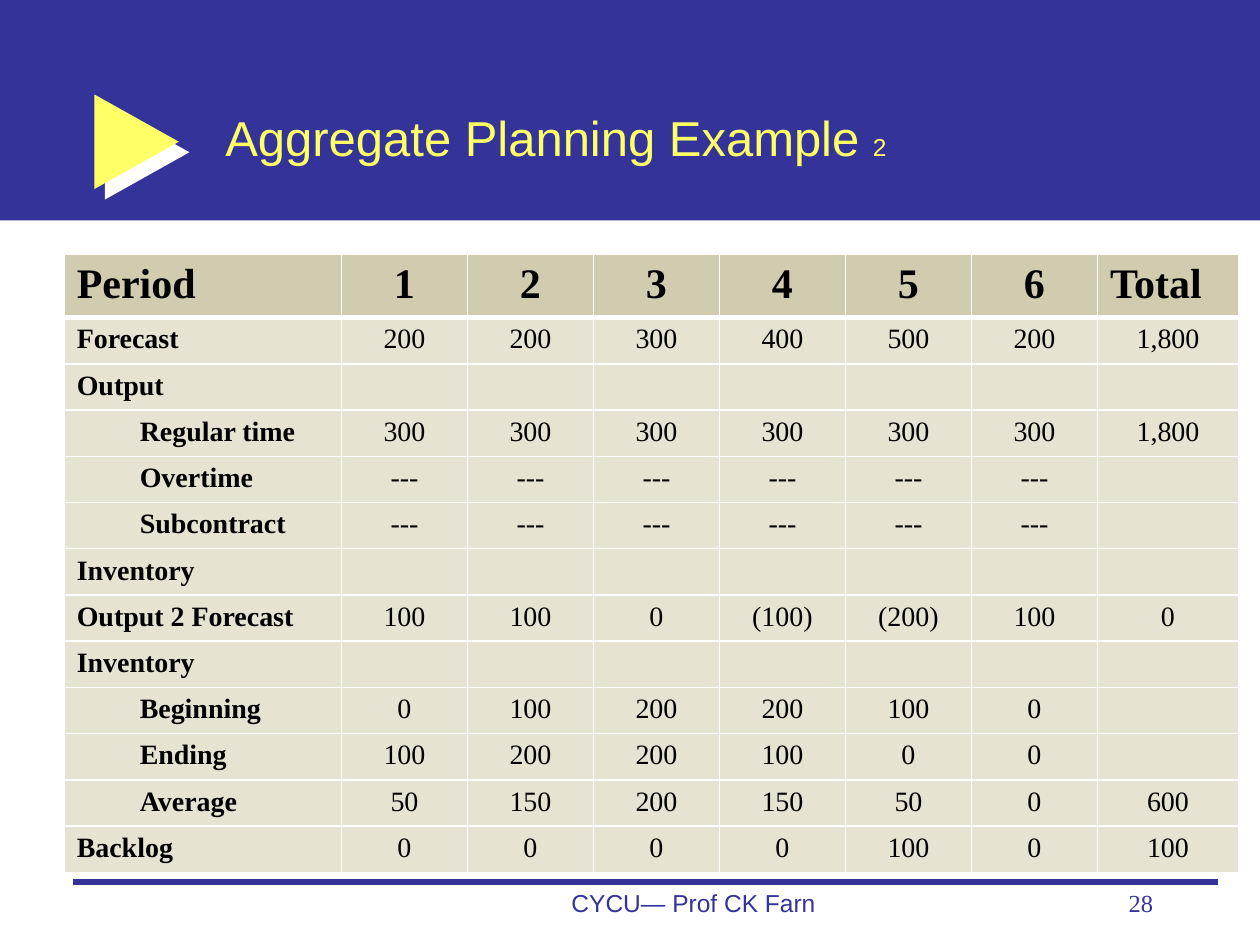
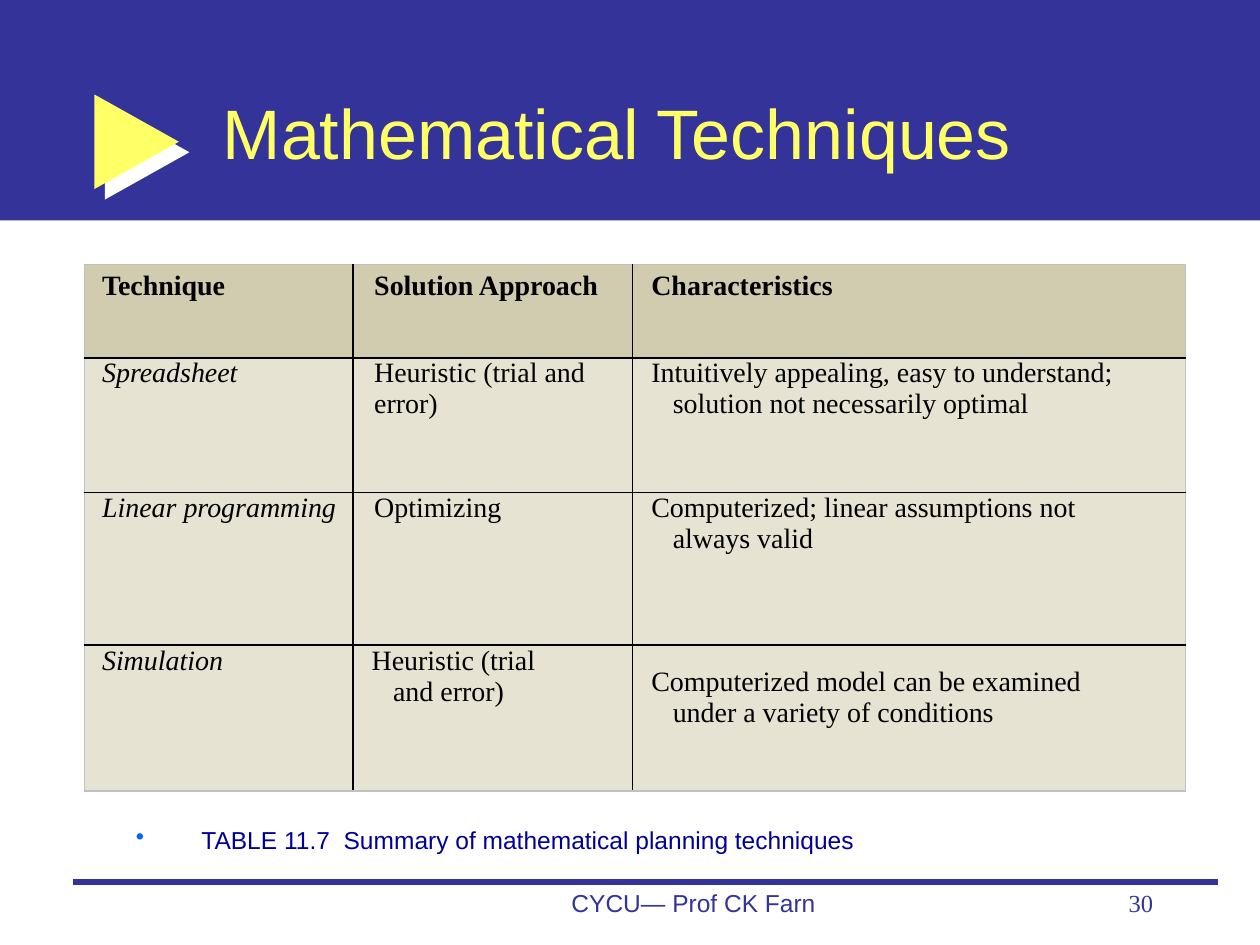
from dataclasses import dataclass
from typing import NamedTuple

from lxml.etree import SubElement
from pptx import Presentation
from pptx.dml.color import RGBColor as Rgb
from pptx.enum.shapes import MSO_CONNECTOR as Link, MSO_SHAPE as Shape
from pptx.enum.text import MSO_ANCHOR as Anchor, PP_ALIGN as Align
from pptx.oxml.ns import qn
from pptx.util import Inches, Pt


@dataclass(frozen=True)
class Theme:
    navy: str = "333399"
    yellow: str = "FFFF66"
    white: str = "FFFFFF"
    black: str = "000000"
    silver: str = "C0C0C0"
    head: str = "D1CBAF"
    body: str = "E6E3D2"
    note: str = "000099"
    dot: str = "0066FF"
    sans: str = "Arial"
    serif: str = "Times New Roman"
    big: int = 40
    title: int = 28
    period: int = 24
    cell: int = 16
    small: int = 14


class Box(NamedTuple):
    left: float
    top: float
    width: float
    height: float


class Style(NamedTuple):
    size: int
    color: str
    face: str
    bold: bool = False
    slant: bool = False


class Lines(NamedTuple):
    inner: str
    outer: str
    head: float


class Plan(NamedTuple):
    label: str
    values: str = ""
    sub: bool = False


class Entry(NamedTuple):
    text: str
    indent: float
    hang: float = 0
    top: float = 0


T = Theme()
FOOTER = "CYCU— Prof CK Farn"
PERIODS = ("Period", "1", "2", "3", "4", "5", "6", "Total")
PLANS = (
    Plan("Forecast", "200 200 300 400 500 200 1,800"),
    Plan("Output"),
    Plan("Regular time", "300 300 300 300 300 300 1,800", True),
    Plan("Overtime", "--- --- --- --- --- ---", True),
    Plan("Subcontract", "--- --- --- --- --- ---", True),
    Plan("Inventory"),
    Plan("Output 2 Forecast", "100 100 0 (100) (200) 100 0"),
    Plan("Inventory"),
    Plan("Beginning", "0 100 200 200 100 0", True),
    Plan("Ending", "100 200 200 100 0 0", True),
    Plan("Average", "50 150 200 150 50 0 600", True),
    Plan("Backlog", "0 0 0 0 100 0 100"),
)
METHODS = (
    (Entry("Technique", 0.14, top=0.05),
     Entry("Solution Approach", 0.17, top=0.05),
     Entry("Characteristics", 0.15, top=0.05)),
    (Entry("Spreadsheet", 0.14),
     Entry("Heuristic (trial and error)", 0.17),
     Entry("Intuitively appealing, easy to understand; "
           "solution not necessarily optimal", 0.32, -0.17)),
    (Entry("Linear programming", 0.14),
     Entry("Optimizing", 0.17),
     Entry("Computerized; linear assumptions not\valways valid", 0.32, -0.17)),
    (Entry("Simulation", 0.14),
     Entry("Heuristic (trial\vand error)", 0.32, -0.17),
     Entry("Computerized model can be examined\vunder a variety of conditions",
           0.32, -0.17, 0.17)),
)


def place(box: Box) -> list:
    return [Inches(side) for side in box]


def tint(parent, color: str) -> None:
    SubElement(parent, qn("a:srgbClr"), val=color)


def dress(font, style: Style) -> None:
    font.size = Pt(style.size)
    font.name = style.face
    font.bold = style.bold
    font.italic = style.slant
    font.color.rgb = Rgb.from_string(style.color)


def write(para, text: str, style: Style, align=Align.LEFT) -> None:
    para.text = text
    para.alignment = align
    for run in para.runs:
        dress(run.font, style)
    if not text:
        SubElement(para._p, qn("a:endParaRPr"), sz=str(style.size * 100))


def indent(para, left: float, first: float = 0) -> None:
    props = para._p.get_or_add_pPr()
    props.set("marL", str(Inches(left)))
    props.set("indent", str(Inches(first)))


def label(slide, box: Box, text: str, style: Style, align=Align.LEFT,
          anchor=Anchor.TOP):
    frame = slide.shapes.add_textbox(*place(box)).text_frame
    frame.word_wrap = True
    frame.vertical_anchor = anchor
    para = frame.paragraphs[0]
    write(para, text, style, align)
    return para


def heading(slide, box: Box, text: str, size: int):
    style = Style(size, T.yellow, T.sans)
    return label(slide, box, text, style, anchor=Anchor.MIDDLE)


def solid(slide, kind, box: Box, color: str):
    shape = slide.shapes.add_shape(kind, *place(box))
    shape.shadow.inherit = False
    shape.fill.solid()
    shape.fill.fore_color.rgb = Rgb.from_string(color)
    shape.line.fill.background()
    return shape


def base(deck, page: int):
    slide = deck.slides.add_slide(deck.slide_layouts[6])
    solid(slide, Shape.RECTANGLE, Box(0, 0, 10, 1.75), T.navy)
    arrow = solid(slide, Shape.RIGHT_ARROW, Box(0.75, 0.75, 0.67, 0.75), T.yellow)
    arrow.adjustments[0] = 0.384
    arrow.adjustments[1] = 1
    effects = arrow._element.spPr.find(qn("a:effectLst"))
    shade = SubElement(effects, qn("a:outerShdw"), dist=str(Pt(8.5)),
                       dir="2700000", algn="ctr", rotWithShape="0")
    tint(shade, T.white)
    rule = slide.shapes.add_connector(
        Link.STRAIGHT, Inches(0.58), Inches(7), Inches(9.67), Inches(7))
    rule.line.color.rgb = Rgb.from_string(T.navy)
    rule.line.width = Pt(3)
    SubElement(rule._element.spPr, qn("a:effectLst"))
    label(slide, Box(3.92, 7, 3.17, 0.5), FOOTER,
          Style(T.small, T.navy, T.sans), Align.CENTER)
    label(slide, Box(7.17, 7, 2.08, 0.5), str(page),
          Style(T.small, T.navy, T.serif), Align.RIGHT)
    return slide


def edge(cell, side: str, color: str, width: float) -> None:
    line = SubElement(cell._tc.get_or_add_tcPr(), qn(f"a:ln{side}"),
                      w=str(Pt(width)))
    tint(SubElement(line, qn("a:solidFill")), color)


def grid(slide, left: float, top: float, widths: list, heights: list,
         lines: Lines):
    box = Box(left, top, sum(widths), sum(heights))
    rows, cols = len(heights), len(widths)
    table = slide.shapes.add_table(rows, cols, *place(box)).table
    for col, width in zip(table.columns, widths):
        col.width = Inches(width)
    for row, height in zip(table.rows, heights):
        row.height = Inches(height)
    for r in range(rows):
        for c in range(cols):
            cell = table.cell(r, c)
            sides = (("L", c == 0, 1), ("R", c == cols - 1, 1),
                     ("T", r == 0, lines.head if r == 1 else 1),
                     ("B", r == rows - 1, lines.head if r == 0 else 1))
            for side, rim, width in sides:
                edge(cell, side, lines.outer if rim else lines.inner, width)
            cell.fill.solid()
            cell.fill.fore_color.rgb = Rgb.from_string(T.body if r else T.head)
    return table


def example(deck) -> None:
    slide = base(deck, 28)
    title = heading(slide, Box(1.69, 0.68, 6.12, 0.82),
                    "Aggregate Planning Example ", T.title)
    part = title.add_run()
    part.text = "2"
    dress(part.font, Style(T.small, T.yellow, T.sans))
    table = grid(slide, 0.51, 2.02, [2.2] + [1] * 6 + [1.12],
                 [0.41] + [0.3] * len(PLANS), Lines(T.white, T.white, 3))
    top = Style(T.period, T.black, T.serif, bold=True)
    name = top._replace(size=T.cell)
    plain = name._replace(bold=False)
    for c, text in enumerate(PERIODS):
        align = Align.CENTER if text.isdigit() else Align.LEFT
        write(table.cell(0, c).text_frame.paragraphs[0], text, top, align)
    for r, plan in enumerate(PLANS, 1):
        para = table.cell(r, 0).text_frame.paragraphs[0]
        write(para, plan.label, name)
        if plan.sub:
            indent(para, 0.5)
        values = plan.values.split()
        values += [""] * (len(PERIODS) - 1 - len(values))
        for c, text in enumerate(values, 1):
            para = table.cell(r, c).text_frame.paragraphs[0]
            write(para, text, plain, Align.CENTER)


def methods(deck) -> None:
    slide = base(deck, 30)
    heading(slide, Box(1.67, 0.42, 7.58, 1.25), "Mathematical Techniques", T.big)
    note = label(slide, Box(0.98, 6.5, 7.56, 0.33),
                 "TABLE 11.7  Summary of mathematical planning techniques",
                 Style(T.small, T.note, T.sans))
    indent(note, 0.52, -0.52)
    props = note._p.get_or_add_pPr()
    tint(SubElement(props, qn("a:buClr")), T.dot)
    SubElement(props, qn("a:buChar"), char="•")
    table = grid(slide, 0.67, 2.1, [2.13, 2.22, 4.39],
                 [0.74, 1.07, 1.21, 1.16], Lines(T.black, T.silver, 1))
    for r, row in enumerate(METHODS):
        for c, entry in enumerate(row):
            cell = table.cell(r, c)
            cell.margin_left = cell.margin_right = cell.margin_bottom = 0
            cell.margin_top = Inches(entry.top)
            para = cell.text_frame.paragraphs[0]
            style = Style(T.cell, T.black, T.serif, r == 0, r > 0 and c == 0)
            write(para, entry.text, style)
            indent(para, entry.indent, entry.hang)


def main() -> None:
    """Build the two planning slides and save them."""
    deck = Presentation()
    deck.slide_width, deck.slide_height = Inches(10), Inches(7.5)
    example(deck)
    methods(deck)
    deck.save("out.pptx")


if __name__ == "__main__":
    main()
